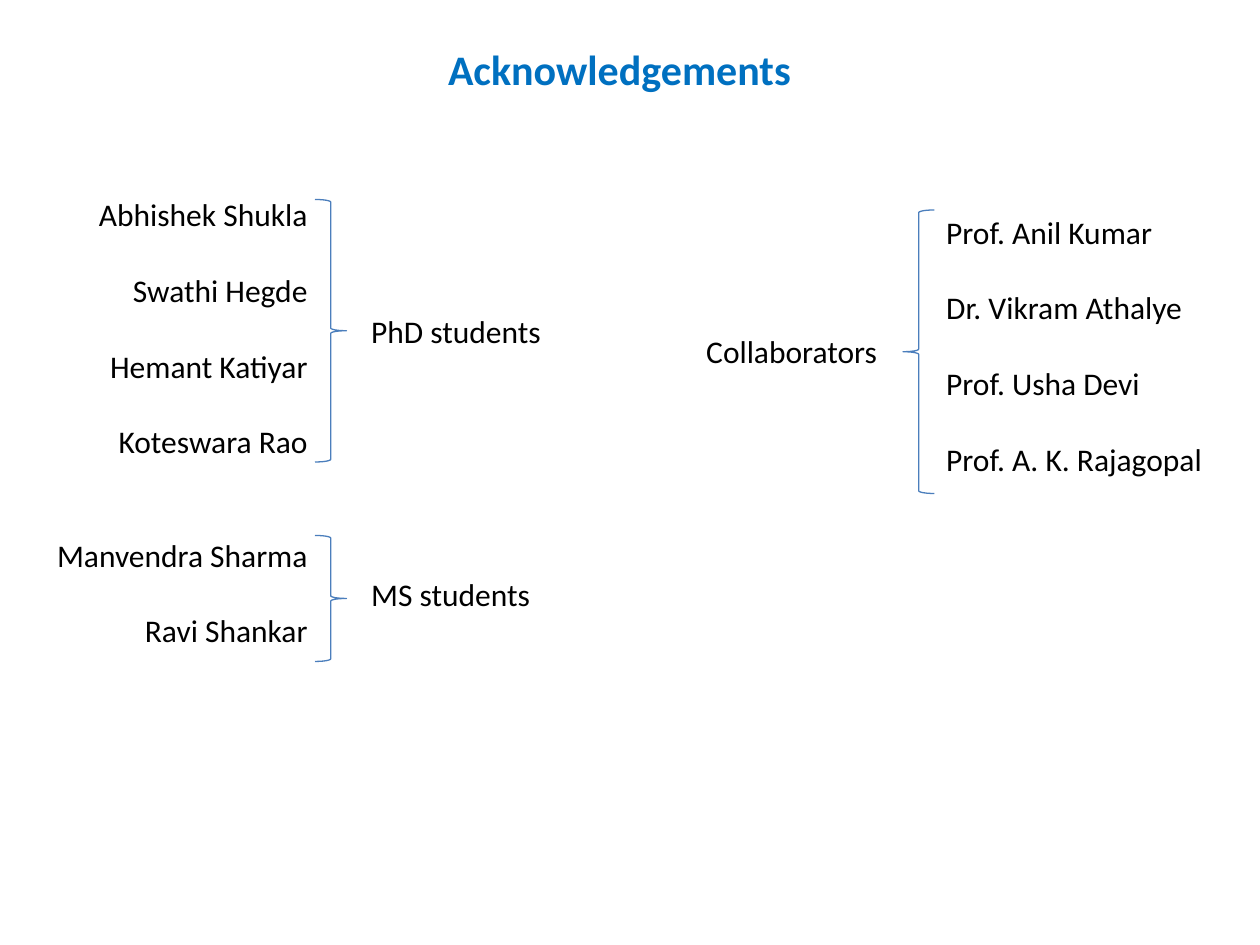
import dataclasses

import pptx
import pptx.dml.color
import pptx.enum.shapes
import pptx.enum.text
import pptx.util
from pptx.oxml.xmlchemy import OxmlElement

Pt = pptx.util.Pt
RGB = pptx.dml.color.RGBColor
Align = pptx.enum.text.PP_ALIGN
Shape = pptx.enum.shapes.MSO_SHAPE


@dataclasses.dataclass(frozen=True)
class Theme:
    font: str = "Calibri"
    title_size: float = 24
    text_size: float = 18
    title_color: RGB = RGB(0x00, 0x70, 0xC0)
    text_color: RGB = RGB(0, 0, 0)
    brace_color: RGB = RGB(0x4B, 0x7E, 0xBC)
    brace_width: float = 0.75


theme = Theme()
LINE = 21.6  # height of one line of names


def write(paragraph, text, size=theme.text_size, color=theme.text_color,
          bold=False, align=Align.LEFT, before=0):
    """Fill a paragraph with one formatted run and no bullet."""
    paragraph.alignment = align
    paragraph.space_before = Pt(before)
    properties = paragraph._p.get_or_add_pPr()
    properties.set("marL", "0")
    properties.set("indent", "0")
    properties.append(OxmlElement("a:buNone"))
    run = paragraph.add_run()
    run.text = text
    run.font.name = theme.font
    run.font.size = Pt(size)
    run.font.bold = bold
    run.font.color.rgb = color


def prepare(shape, left, top, width, height):
    """Place a text shape and return its top-anchored, unwrapped frame."""
    shape.left, shape.top, shape.width, shape.height = map(Pt, (left, top, width, height))
    frame = shape.text_frame
    frame.word_wrap = False
    frame.auto_size = pptx.enum.text.MSO_AUTO_SIZE.NONE
    frame.vertical_anchor = pptx.enum.text.MSO_ANCHOR.TOP
    return frame


presentation = pptx.Presentation()
presentation.slide_width, presentation.slide_height = Pt(720), Pt(540)
slide = presentation.slides.add_slide(presentation.slide_layouts[3])
title, students, collaborators = list(slide.placeholders)[:3]

# Title
frame = prepare(title, 219, 21, 270, 36)
write(frame.paragraphs[0], "Acknowledgements", size=theme.title_size,
      color=theme.title_color, bold=True, align=Align.CENTER)

# Lists of names: each name with the space before it, in lines
lists = [
    (students, (24, 108, 159, 291), Align.RIGHT,
     [("Abhishek Shukla", 0), ("Swathi Hegde", 1), ("Hemant Katiyar", 1),
      ("Koteswara Rao", 1), ("Manvendra Sharma", 2), ("Ravi Shankar", 1)]),
    (collaborators, (533.5, 118, 162, 181.5), Align.LEFT,
     [("Prof. Anil Kumar", 0), ("Dr. Vikram Athalye", 1),
      ("Prof. Usha Devi", 1), ("Prof. A. K. Rajagopal", 1)]),
]
for placeholder, box, align, names in lists:
    frame = prepare(placeholder, *box)
    for index, (name, gap) in enumerate(names):
        paragraph = frame.add_paragraph() if index else frame.paragraphs[0]
        write(paragraph, name, align=align, before=gap * LINE)

# Braces with their group labels
groups = [
    (Shape.RIGHT_BRACE, (180, 114, 18, 150), "PhD students", (205, 174.5, 112.5, 29)),
    (Shape.RIGHT_BRACE, (180, 306, 18, 72), "MS students", (205, 325, 106.5, 29)),
    (Shape.LEFT_BRACE, (516, 120, 18, 162), "Collaborators", (396.5, 186, 113, 29)),
]
for kind, brace_box, label, label_box in groups:
    brace = slide.shapes.add_shape(kind, *map(Pt, brace_box))
    brace.shadow.inherit = False
    brace.fill.background()
    brace.line.color.rgb = theme.brace_color
    brace.line.width = Pt(theme.brace_width)
    text_box = slide.shapes.add_textbox(*map(Pt, label_box))
    write(prepare(text_box, *label_box).paragraphs[0], label)

presentation.save("out.pptx")
